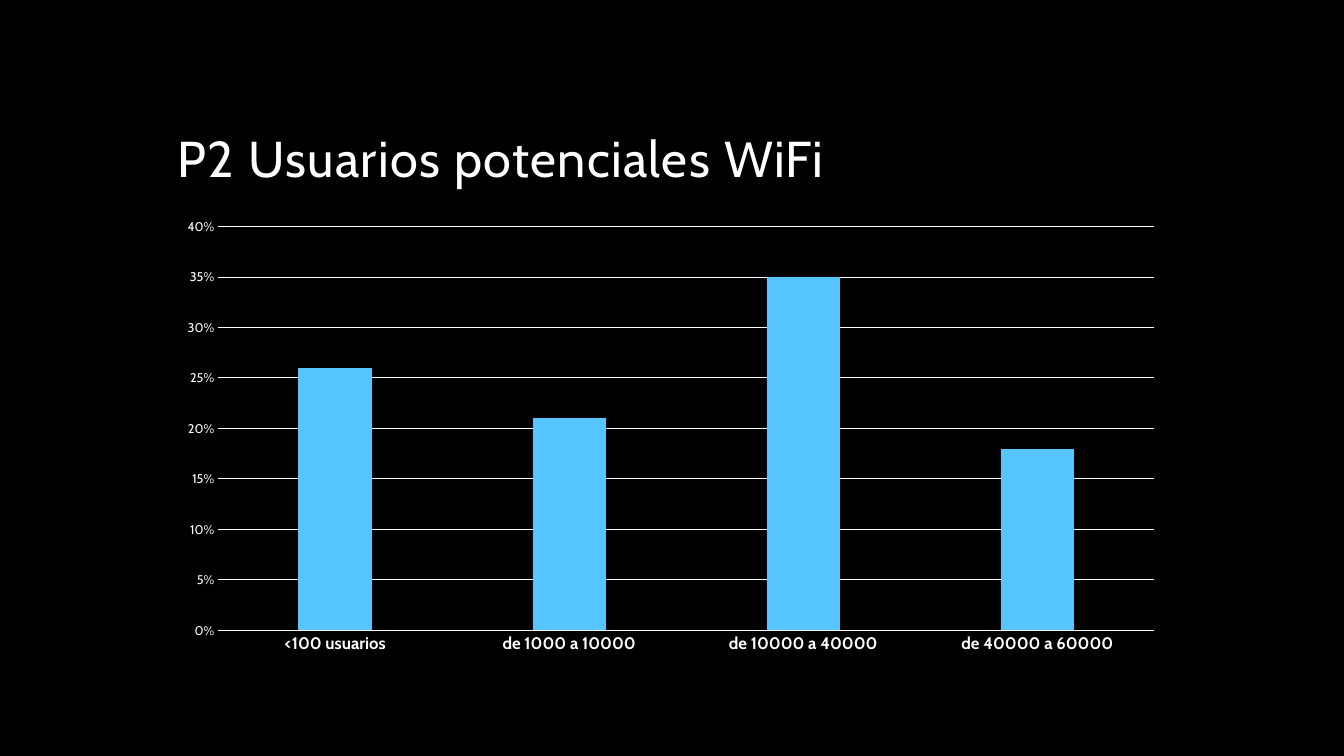
"""Build a slide with a column chart of potential WiFi users."""
from pptx import Presentation
from pptx.chart.data import CategoryChartData
from pptx.dml.color import RGBColor
from pptx.enum.chart import XL_CHART_TYPE, XL_TICK_MARK
from pptx.enum.text import MSO_ANCHOR, MSO_AUTO_SIZE, PP_ALIGN
from pptx.util import Inches, Pt

TITLE = "P2 Usuarios potenciales WiFi"
USERS = {
    "<100 usuarios": 0.26,
    "de 1000 a 10000": 0.21,
    "de 10000 a 40000": 0.35,
    "de 40000 a 60000": 0.18,
}
FONT = "Cabin"
BLACK, WHITE, BLUE = "000000", "FFFFFF", "56C5FF"
TITLE_BOX = (1.66, 0.42, 10, 1.5)
CHART_BOX = (1.66, 2.08, 9.99, 4.5)


def rgb(value):
    return RGBColor.from_string(value)


def set_font(font, size, bold=False):
    font.name = FONT
    font.size = Pt(size)
    font.bold = bold
    font.color.rgb = rgb(WHITE)


def set_line(line):
    line.color.rgb = rgb(WHITE)
    line.width = Pt(0.75)


def add_title(s):
    sp = s.shapes.title
    sp.left, sp.top, sp.width, sp.height = map(Inches, TITLE_BOX)
    tf = sp.text_frame
    tf.text = TITLE
    tf.word_wrap = True
    tf.auto_size = MSO_AUTO_SIZE.NONE
    tf.vertical_anchor = MSO_ANCHOR.BOTTOM
    p = tf.paragraphs[0]
    p.alignment = PP_ALIGN.LEFT
    p.line_spacing = 0.9
    set_font(p.font, 36)
    p.runs[0].font._element.set("spc", "100")


def add_users_chart(s):
    data = CategoryChartData(number_format="0%")
    data.categories = list(USERS)
    data.add_series("Series 1", list(USERS.values()))
    chart = s.shapes.add_chart(
        XL_CHART_TYPE.COLUMN_CLUSTERED, *map(Inches, CHART_BOX), data
    ).chart
    chart.has_title = False
    chart.has_legend = False
    set_font(chart.font, 10)

    plot = chart.plots[0]
    plot.vary_by_categories = False
    plot.gap_width = 219
    plot.overlap = -27
    fill = plot.series[0].format.fill
    fill.solid()
    fill.fore_color.rgb = rgb(BLUE)

    for axis in (chart.category_axis, chart.value_axis):
        axis.major_tick_mark = XL_TICK_MARK.NONE
        axis.minor_tick_mark = XL_TICK_MARK.NONE
    set_font(chart.category_axis.tick_labels.font, 12, bold=True)
    set_line(chart.category_axis.format.line)

    axis = chart.value_axis
    axis.minimum_scale, axis.maximum_scale, axis.major_unit = 0, 0.4, 0.05
    axis.format.line.fill.background()
    set_line(axis.major_gridlines.format.line)
    set_font(axis.tick_labels.font, 9)
    axis.tick_labels.number_format = "0%"
    axis.tick_labels.number_format_is_linked = False


def main():
    prs = Presentation()
    prs.slide_width, prs.slide_height = Inches(13.33), Inches(7.5)
    s = prs.slides.add_slide(prs.slide_layouts[5])
    s.background.fill.solid()
    s.background.fill.fore_color.rgb = rgb(BLACK)
    add_title(s)
    add_users_chart(s)
    prs.save("out.pptx")


if __name__ == "__main__":
    main()
